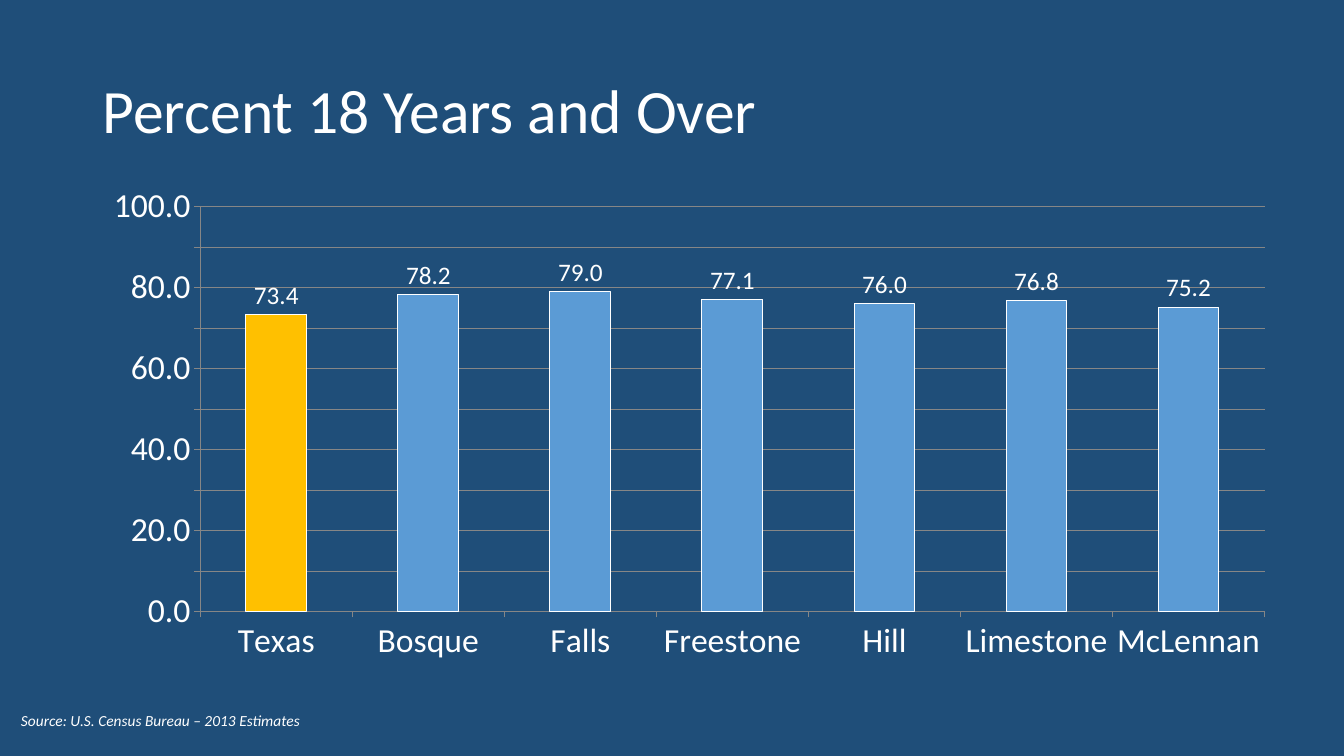
from dataclasses import dataclass

from pptx import Presentation
from pptx.chart.data import CategoryChartData
from pptx.dml.color import RGBColor
from pptx.enum.chart import XL_CHART_TYPE, XL_LABEL_POSITION, XL_TICK_MARK
from pptx.enum.text import MSO_ANCHOR, MSO_AUTO_SIZE
from pptx.util import Inches, Pt


@dataclass(frozen=True)
class Theme:
    font: str = "Calibri"
    background: RGBColor = RGBColor(0x1F, 0x4E, 0x79)
    text: RGBColor = RGBColor(0xFF, 0xFF, 0xFF)
    bar: RGBColor = RGBColor(0x5B, 0x9B, 0xD5)
    state_bar: RGBColor = RGBColor(0xFF, 0xC0, 0x00)
    grid: RGBColor = RGBColor(0x86, 0x86, 0x86)
    title_size: Pt = Pt(44)
    axis_size: Pt = Pt(24)
    label_size: Pt = Pt(18)
    source_size: Pt = Pt(11)
    line_width: Pt = Pt(0.75)


THEME = Theme()

ADULT_SHARE = {
    "Texas": 73.4,
    "Bosque": 78.2,
    "Falls": 79.0,
    "Freestone": 77.1,
    "Hill": 76.0,
    "Limestone": 76.8,
    "McLennan": 75.2,
}


def style_font(font, size):
    font.name = THEME.font
    font.size = size
    font.color.rgb = THEME.text


def style_line(line, color):
    line.color.rgb = color
    line.width = THEME.line_width


def add_text(page, box, text, size):
    """Add a one-run text box and return its frame, paragraph and run."""
    frame = page.shapes.add_textbox(*box).text_frame
    para = frame.paragraphs[0]
    span = para.add_run()
    span.text = text
    style_font(span.font, size)
    return frame, para, span


def add_title(page, box):
    frame, para, _ = add_text(page, box, "Percent 18 Years and Over", THEME.title_size)
    frame.word_wrap = True
    frame.vertical_anchor = MSO_ANCHOR.MIDDLE
    para.line_spacing = 0.9


def add_source(page, box):
    frame, _, span = add_text(
        page, box, "Source: U.S. Census Bureau – 2013 Estimates", THEME.source_size
    )
    frame.word_wrap = False
    frame.auto_size = MSO_AUTO_SIZE.SHAPE_TO_FIT_TEXT
    span.font.italic = True


def style_axes(chart):
    for axis in (chart.category_axis, chart.value_axis):
        axis.major_tick_mark = XL_TICK_MARK.OUTSIDE
        axis.minor_tick_mark = XL_TICK_MARK.NONE
        style_font(axis.tick_labels.font, THEME.axis_size)
        style_line(axis.format.line, THEME.grid)
    values = chart.value_axis
    values.minimum_scale = 0
    values.maximum_scale = 100
    values.major_unit = 10
    values.has_major_gridlines = True
    style_line(values.major_gridlines.format.line, THEME.grid)


def style_bar(target, color):
    target.format.fill.solid()
    target.format.fill.fore_color.rgb = color
    style_line(target.format.line, THEME.text)


def add_share_chart(page, box):
    data = CategoryChartData(number_format="0.0")
    data.categories = list(ADULT_SHARE)
    data.add_series("Series 1", list(ADULT_SHARE.values()))
    chart = page.shapes.add_chart(XL_CHART_TYPE.COLUMN_CLUSTERED, *box, data).chart
    chart.has_legend = False
    chart.has_title = False
    style_font(chart.font, THEME.label_size)
    style_axes(chart)

    plot = chart.plots[0]
    plot.gap_width = 150
    plot.vary_by_categories = False
    series = plot.series[0]
    series.invert_if_negative = False
    style_bar(series, THEME.bar)
    style_bar(series.points[0], THEME.state_bar)

    labels = series.data_labels
    labels.show_value = True
    labels.number_format = "#,##0.0"
    labels.number_format_is_linked = False
    labels.position = XL_LABEL_POSITION.OUTSIDE_END
    style_font(labels.font, THEME.label_size)


def build_chart_page(deck):
    page = deck.slides.add_slide(deck.slide_layouts[6])
    page.background.fill.solid()
    page.background.fill.fore_color.rgb = THEME.background
    add_title(page, (Inches(0.92), Inches(0.4), Inches(11.5), Inches(1.45)))
    add_share_chart(page, (Inches(0.89), Inches(1.75), Inches(11.89), Inches(4.92)))
    add_source(page, (Inches(0.11), Inches(7.01), Inches(3), Inches(0.29)))


def main():
    deck = Presentation()
    deck.slide_width = Inches(13.33)
    deck.slide_height = Inches(7.5)
    build_chart_page(deck)
    deck.save("out.pptx")


if __name__ == "__main__":
    main()
